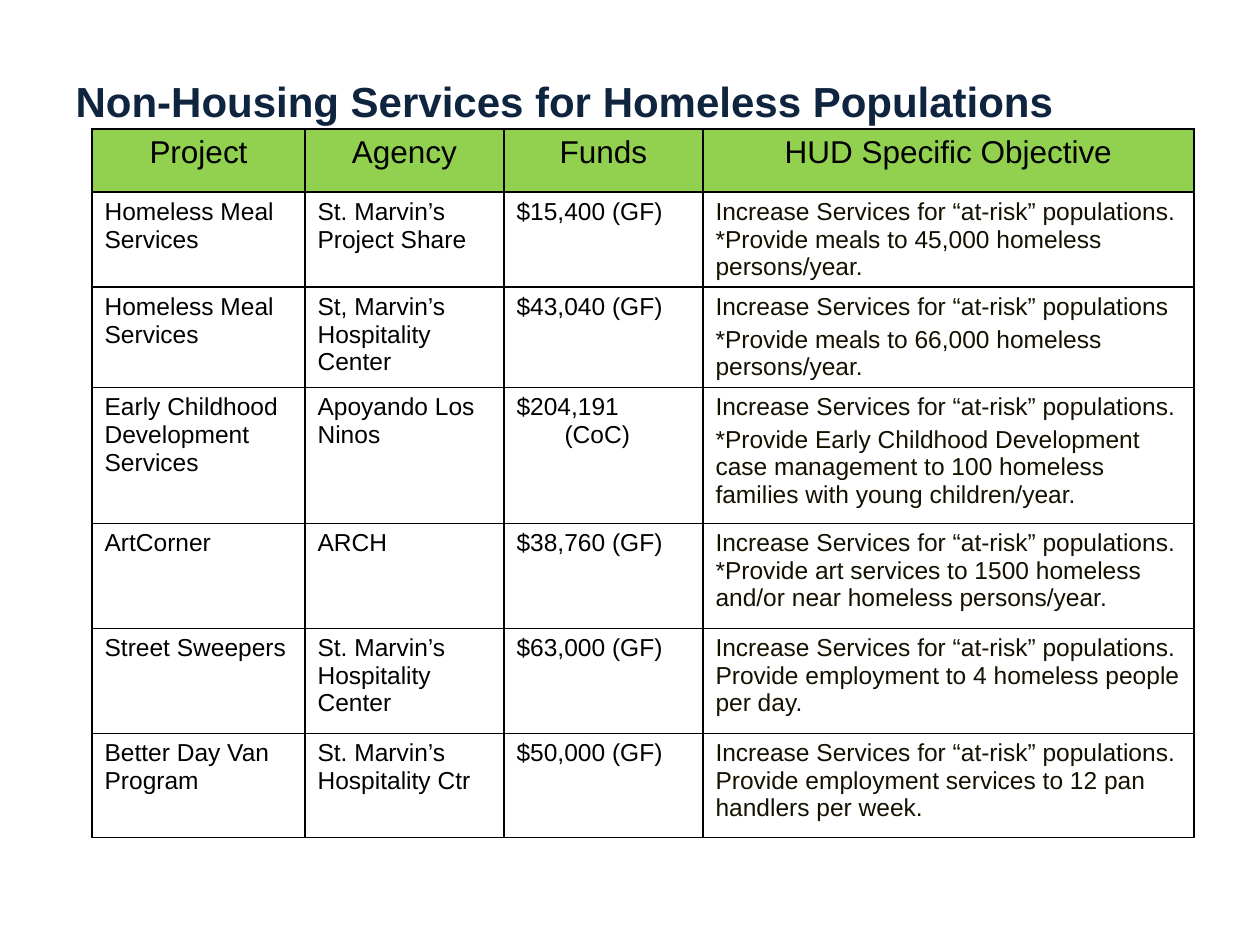
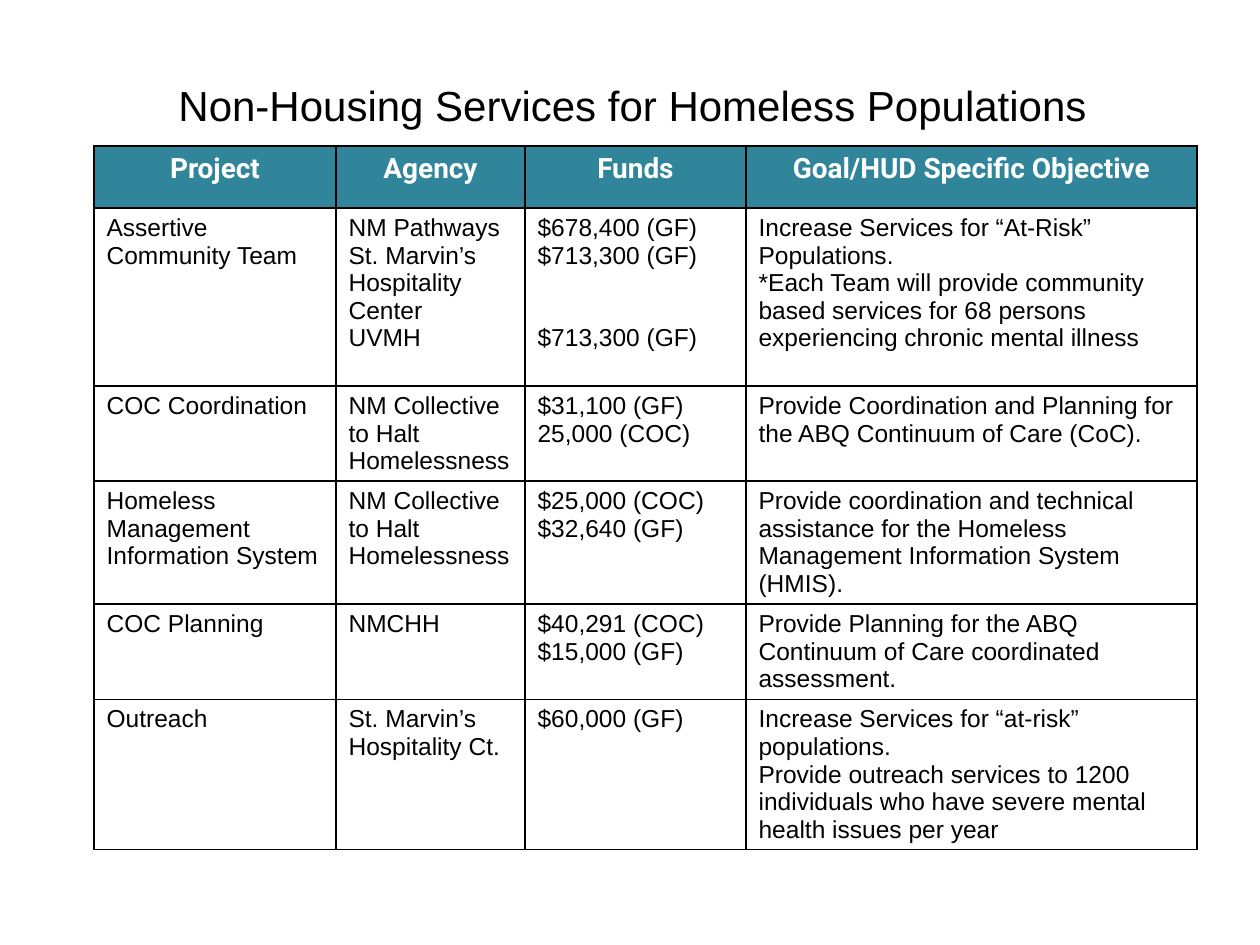
from dataclasses import dataclass
from typing import NamedTuple

from lxml import etree
from pptx import Presentation
from pptx.dml.color import RGBColor
from pptx.enum.text import MSO_ANCHOR, MSO_AUTO_SIZE, PP_ALIGN
from pptx.oxml.ns import qn
from pptx.util import Emu, Pt

LEFT, CENTER = PP_ALIGN.LEFT, PP_ALIGN.CENTER
TOP = MSO_ANCHOR.TOP
NO_AUTOFIT = MSO_AUTO_SIZE.NONE

COLORS = {
    "black": "000000",
    "white": "FFFFFF",
    "navy": "0F243E",
    "green": "92D050",
    "teal": "31859B",
    "umber": "141100",
}
PX_PER_INCH = 126
SLIDE_SIZE = (1260, 945)
TITLE_ONLY = 5
TITLE_TEXT = "Non-Housing Services for Homeless Populations"
FUNDS_COLUMN, OBJECTIVE_COLUMN = 2, 3
FUNDS_INDENT = 48
BORDER_POINTS = 1


class TextStyle(NamedTuple):
    size: int
    color: str = "black"
    bold: bool = False
    font: str = "Arial"
    align: PP_ALIGN = LEFT


class Box(NamedTuple):
    left: int
    top: int
    width: int
    height: int


class Line(NamedTuple):
    text: str
    space_before: float = 0


class ServiceRow(NamedTuple):
    height: int
    project: str
    agency: tuple[str, ...]
    funds: tuple[str | Line, ...]
    objective: tuple[str | Line, ...]


@dataclass(frozen=True)
class ServicesSlide:
    title_box: Box
    title_style: TextStyle
    table_left: int
    table_top: int
    column_widths: tuple[int, ...]
    header_height: int
    header_fill: str
    header_style: TextStyle
    objective_heading: str
    objective_color: str
    services: tuple[ServiceRow, ...]


AT_RISK = "Increase Services for “at-risk” populations."
COLLECTIVE = "NM Collective to Halt Homelessness"

MEALS_AND_OUTREACH = ServicesSlide(
    title_box=Box(63, 69, 1129, 72),
    title_style=TextStyle(24, "navy", bold=True),
    table_left=92,
    table_top=129,
    column_widths=(213, 199, 199, 491),
    header_height=63,
    header_fill="green",
    header_style=TextStyle(18, align=CENTER),
    objective_heading="HUD Specific Objective",
    objective_color="umber",
    services=(
        ServiceRow(95, "Homeless Meal Services", ("St. Marvin’s Project Share",),
                   ("$15,400 (GF)",),
                   (AT_RISK, "*Provide meals to 45,000 homeless persons/year.")),
        ServiceRow(100, "Homeless Meal Services", ("St, Marvin’s Hospitality Center",),
                   ("$43,040 (GF)",),
                   ("Increase Services for “at-risk” populations",
                    Line("*Provide meals to 66,000 homeless persons/year.", 2.8))),
        ServiceRow(136, "Early Childhood Development Services", ("Apoyando Los Ninos",),
                   ("$204,191 (CoC)",),
                   (AT_RISK,
                    Line("*Provide Early Childhood Development case management to "
                         "100 homeless families with young children/year.", 2.8))),
        ServiceRow(105, "ArtCorner", ("ARCH",), ("$38,760 (GF)",),
                   (AT_RISK, "*Provide art services to 1500 homeless and/or near "
                             "homeless persons/year.")),
        ServiceRow(105, "Street Sweepers", ("St. Marvin’s Hospitality Center",),
                   ("$63,000 (GF)",),
                   (AT_RISK, "Provide employment to 4 homeless people per day.")),
        ServiceRow(104, "Better Day Van Program", ("St. Marvin’s Hospitality Ctr",),
                   ("$50,000 (GF)",),
                   (AT_RISK, "Provide employment services to 12 pan handlers per week.")),
    ),
)

COORDINATION = ServicesSlide(
    title_box=Box(94, 73, 1077, 72),
    title_style=TextStyle(24, align=CENTER),
    table_left=94,
    table_top=146,
    column_widths=(242, 189, 221, 451),
    header_height=62,
    header_fill="teal",
    header_style=TextStyle(16, "white", bold=True, font="Roboto", align=CENTER),
    objective_heading="Goal/HUD Specific Objective",
    objective_color="black",
    services=(
        ServiceRow(178, "Assertive Community Team",
                   ("NM Pathways", "St. Marvin’s Hospitality Center", "UVMH"),
                   ("$678,400 (GF)", "$713,300 (GF)", Line("$713,300 (GF)", 31.4)),
                   ("Increase Services for “At-Risk” Populations.",
                    "*Each Team will provide community based services for 68 persons "
                    "experiencing chronic mental illness")),
        ServiceRow(95, "COC Coordination", (COLLECTIVE,),
                   ("$31,100 (GF)", "25,000 (COC)"),
                   ("Provide Coordination and Planning for the ABQ Continuum of Care "
                    "(CoC).",)),
        ServiceRow(123, "Homeless Management Information System", (COLLECTIVE,),
                   ("$25,000 (COC)", "$32,640 (GF)"),
                   ("Provide coordination and technical assistance for the Homeless "
                    "Management Information System (HMIS).",)),
        ServiceRow(95, "COC Planning", ("NMCHH",),
                   ("$40,291 (COC)", "$15,000 (GF)"),
                   ("Provide Planning for the ABQ Continuum of Care coordinated "
                    "assessment.",)),
        ServiceRow(150, "Outreach", ("St. Marvin’s Hospitality Ct.",), ("$60,000 (GF)",),
                   (AT_RISK, "Provide outreach services to 1200 individuals who have "
                             "severe mental health issues per year")),
    ),
)


def px(length: int) -> Emu:
    return Emu(round(length * 914400 / PX_PER_INCH))


def rgb(color: str) -> RGBColor:
    return RGBColor.from_string(COLORS[color])


def style_paragraph(paragraph, style: TextStyle) -> None:
    paragraph.alignment = style.align
    font = paragraph.font
    font.name, font.size, font.bold = style.font, Pt(style.size), style.bold
    font.color.rgb = rgb(style.color)


def add_borders(cell) -> None:
    properties = cell._tc.get_or_add_tcPr()
    for position, side in enumerate(("a:lnL", "a:lnR", "a:lnT", "a:lnB")):
        border = etree.Element(qn(side), w=str(Pt(BORDER_POINTS)))
        fill = etree.SubElement(border, qn("a:solidFill"))
        etree.SubElement(fill, qn("a:srgbClr"), val=COLORS["black"])
        properties.insert(position, border)


def fill_cell(cell, lines: tuple[str | Line, ...], style: TextStyle,
              fill: str | None = None, indent: int = 0) -> None:
    if fill:
        cell.fill.solid()
        cell.fill.fore_color.rgb = rgb(fill)
    else:
        cell.fill.background()
    add_borders(cell)
    frame = cell.text_frame
    for index, entry in enumerate(lines):
        line = Line(entry) if isinstance(entry, str) else entry
        paragraph = frame.add_paragraph() if index else frame.paragraphs[0]
        paragraph.text = line.text
        paragraph.space_before = Pt(line.space_before)
        style_paragraph(paragraph, style)
        if indent:  # wrapped lines hang behind the first
            properties = paragraph._p.get_or_add_pPr()
            properties.set("marL", str(px(indent)))
            properties.set("indent", str(-px(indent)))


def add_title(slide, content: ServicesSlide) -> None:
    title = slide.shapes.title
    title.left, title.top, title.width, title.height = map(px, content.title_box)
    frame = title.text_frame
    frame.text = TITLE_TEXT
    frame.word_wrap = True
    frame.auto_size = NO_AUTOFIT
    frame.vertical_anchor = TOP
    style_paragraph(frame.paragraphs[0], content.title_style)


def add_services_table(slide, content: ServicesSlide) -> None:
    heights = [content.header_height] + [row.height for row in content.services]
    box = Box(content.table_left, content.table_top,
              sum(content.column_widths), sum(heights))
    table = slide.shapes.add_table(
        len(heights), len(content.column_widths), *map(px, box)).table
    table.first_row = table.horz_banding = False
    for column, width in zip(table.columns, content.column_widths):
        column.width = px(width)
    for row, height in zip(table.rows, heights):
        row.height = px(height)

    # Heading row
    headings = ("Project", "Agency", "Funds", content.objective_heading)
    for column, heading in enumerate(headings):
        fill_cell(table.cell(0, column), (heading,), content.header_style,
                  fill=content.header_fill)

    # One row per service
    for row, service in enumerate(content.services, start=1):
        entries = ((service.project,), service.agency, service.funds, service.objective)
        for column, lines in enumerate(entries):
            color = content.objective_color if column == OBJECTIVE_COLUMN else "black"
            indent = FUNDS_INDENT if column == FUNDS_COLUMN else 0
            fill_cell(table.cell(row, column), lines, TextStyle(14, color), indent=indent)


def main() -> None:
    deck = Presentation()
    deck.slide_width, deck.slide_height = map(px, SLIDE_SIZE)
    for content in (MEALS_AND_OUTREACH, COORDINATION):
        slide = deck.slides.add_slide(deck.slide_layouts[TITLE_ONLY])
        add_title(slide, content)
        add_services_table(slide, content)
    deck.save("out.pptx")


if __name__ == "__main__":
    main()
